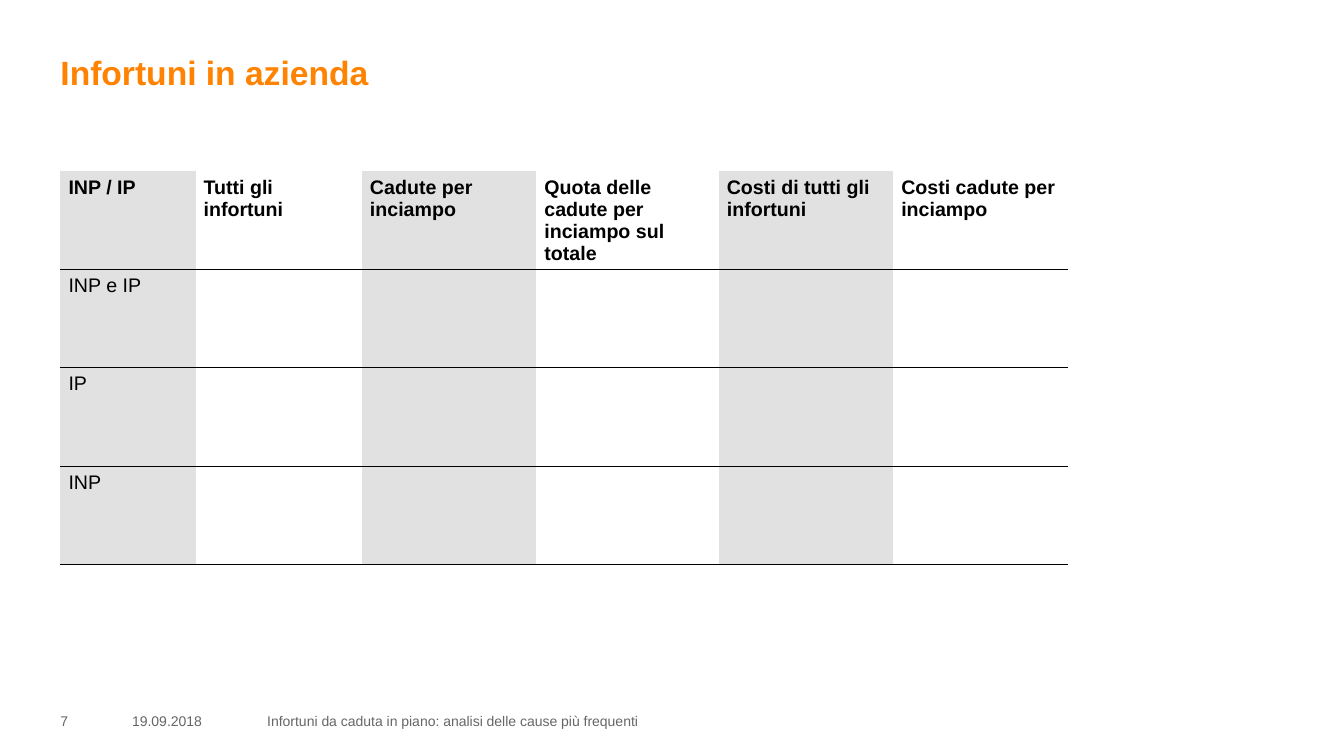
import pptx
import pptx.util
import pptx.dml.color
import pptx.enum.text
import pptx.oxml
import pptx.oxml.ns

WIDE = pptx.util.Inches(13.333)
HIGH = pptx.util.Inches(7.5)
LEFT = 4.5
GRAY = "E1E1E1"
BLACK = "000000"
ANCHOR = pptx.enum.text.MSO_ANCHOR

HEADS = ["INP / IP", "Tutti gli infortuni", "Cadute per inciampo",
         "Quota delle cadute per inciampo sul totale",
         "Costi di tutti gli infortuni", "Costi cadute per inciampo"]
GROUPS = ["INP e IP", "IP", "INP"]
WIDTHS = [10.05, 12.38, 12.98, 13.58, 12.98, 12.98]
FOOTER = [("7", LEFT, 4.13),
          ("19.09.2018", 9.83, 8.85),
          ("Infortuni da caduta in piano: analisi delle cause più frequenti",
           19.88, 64.35)]


def across(share):
    return int(WIDE * share / 100)


def down(share):
    return int(HIGH * share / 100)


def color(code):
    return pptx.dml.color.RGBColor.from_string(code)


def write(frame, text, size, code, bold=False):
    run = frame.paragraphs[0].add_run()
    run.text = text
    run.font.name = "Arial"
    run.font.size = pptx.util.Pt(size)
    run.font.bold = bold
    run.font.color.rgb = color(code)


def settle(frame, anchor):
    frame.word_wrap = True
    frame.auto_size = pptx.enum.text.MSO_AUTO_SIZE.NONE
    frame.vertical_anchor = anchor
    frame.margin_left = frame.margin_right = 0
    frame.margin_top = frame.margin_bottom = 0
    frame.paragraphs[0].alignment = pptx.enum.text.PP_ALIGN.LEFT


def title(slide, text):
    head = slide.shapes.title
    head.left, head.top = across(LEFT), down(6.93)
    head.width, head.height = across(91), down(12.53)
    settle(head.text_frame, ANCHOR.TOP)
    write(head.text_frame, text, 24, "FF8200", True)


def note(slide, text, left, width):
    box = slide.shapes.add_textbox(across(left), down(94), across(width), down(2.67))
    settle(box.text_frame, ANCHOR.MIDDLE)
    write(box.text_frame, text, 10, "666666")


def border(cell, ruled):
    space = pptx.oxml.ns.nsdecls("a")
    props = cell._tc.get_or_add_tcPr()
    for spot, side in enumerate("LRTB"):
        paint = "<a:noFill/>"
        if side in ruled:
            paint = f'<a:solidFill><a:srgbClr val="{BLACK}"/></a:solidFill>'
        line = f'<a:ln{side} {space} w="{pptx.util.Pt(0.67)}">{paint}</a:ln{side}>'
        props.insert(spot, pptx.oxml.parse_xml(line))


def fill(cell, shaded):
    if shaded:
        cell.fill.solid()
        cell.fill.fore_color.rgb = color(GRAY)
    else:
        cell.fill.background()


def grid(slide):
    rows = [HEADS] + [[name] + [""] * (len(HEADS) - 1) for name in GROUPS]
    frame = slide.shapes.add_table(len(rows), len(HEADS), across(LEFT), down(22.67),
                                   across(sum(WIDTHS)), down(52))
    table = frame.table
    table.horz_banding = False
    table.first_row = False
    for column, width in zip(table.columns, WIDTHS):
        column.width = across(width)
    for y, texts in enumerate(rows):
        table.rows[y].height = down(52 / len(rows))
        for x, text in enumerate(texts):
            cell = table.cell(y, x)
            cell.margin_left = cell.margin_right = pptx.util.Inches(0.08)
            cell.margin_top = cell.margin_bottom = pptx.util.Inches(0.05)
            fill(cell, x % 2 == 0)
            border(cell, "TB" if y else "B")
            if text:
                write(cell.text_frame, text, 14, BLACK, y == 0)


def main():
    deck = pptx.Presentation()
    deck.slide_width, deck.slide_height = WIDE, HIGH
    slide = deck.slides.add_slide(deck.slide_layouts[5])
    title(slide, "Infortuni in azienda")
    grid(slide)
    for text, left, width in FOOTER:
        note(slide, text, left, width)
    deck.save("out.pptx")


if __name__ == "__main__":
    main()
